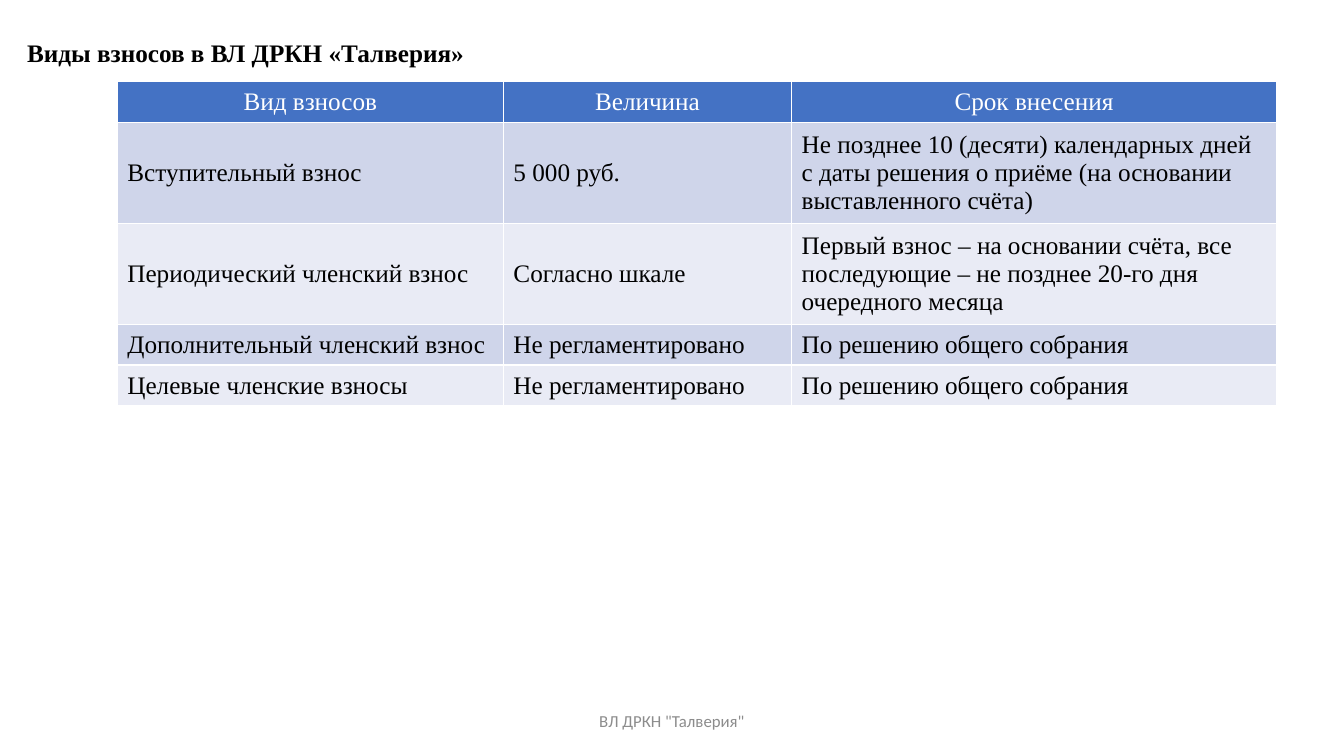
from pptx import Presentation
from pptx.dml.color import RGBColor
from pptx.enum import text
from pptx.util import Pt

BLACK = RGBColor(0x00, 0x00, 0x00)
WHITE = RGBColor(0xFF, 0xFF, 0xFF)
GRAY = RGBColor(0x8C, 0x8C, 0x8C)
HEADER_BLUE = RGBColor(0x44, 0x72, 0xC4)
BANDS = (RGBColor(0xCF, 0xD5, 0xEA), RGBColor(0xE9, 0xEB, 0xF5))
SERIF, SANS = "Times New Roman", "Calibri"
LEFT, CENTER = text.PP_ALIGN.LEFT, text.PP_ALIGN.CENTER
TOP, MIDDLE = text.MSO_ANCHOR.TOP, text.MSO_ANCHOR.MIDDLE

COLUMN_WIDTHS = (275.8, 205.9, 346.3)
LINE_ROW, TALL_ROW = 29.2, 72
FEES = (
    ("Вид взносов", "Величина", "Срок внесения"),
    ("Вступительный взнос", "5 000 руб.",
     "Не позднее 10 (десяти) календарных дней с даты решения о приёме "
     "(на основании выставленного счёта)"),
    ("Периодический членский взнос", "Согласно шкале",
     "Первый взнос – на основании счёта, все последующие – "
     "не позднее 20-го дня очередного месяца"),
    ("Дополнительный членский взнос", "Не регламентировано",
     "По решению общего собрания"),
    ("Целевые членские взносы", "Не регламентировано",
     "По решению общего собрания"),
)
ROW_HEIGHTS = (LINE_ROW, TALL_ROW, TALL_ROW, LINE_ROW, LINE_ROW)


def write(tf, words, size, font, color, align=LEFT, bold=False):
    p = tf.paragraphs[0]
    p.alignment = align
    r = p.add_run()
    r.text = words
    r.font.size = Pt(size)
    r.font.name = font
    r.font.bold = bold
    r.font.color.rgb = color


def add_title(s, words):
    sp = s.shapes.title
    sp.left, sp.top, sp.width, sp.height = Pt(12.2), Pt(23), Pt(934.6), Pt(29)
    tf = sp.text_frame
    tf.word_wrap = True
    tf.auto_size = text.MSO_AUTO_SIZE.SHAPE_TO_FIT_TEXT
    tf.vertical_anchor = TOP
    write(tf, words, 18, SERIF, BLACK, bold=True)


def add_fee_table(s):
    frame = s.shapes.add_table(len(FEES), len(COLUMN_WIDTHS), Pt(83.8), Pt(58.3),
                               Pt(sum(COLUMN_WIDTHS)), Pt(sum(ROW_HEIGHTS)))
    table = frame.table
    for column, width in zip(table.columns, COLUMN_WIDTHS):
        column.width = Pt(width)
    for row, height in zip(table.rows, ROW_HEIGHTS):
        row.height = Pt(height)

    # Header row, then alternating bands
    for i, fee in enumerate(FEES):
        header = i == 0
        for j, words in enumerate(fee):
            cell = table.cell(i, j)
            cell.vertical_anchor = MIDDLE
            cell.fill.solid()
            cell.fill.fore_color.rgb = HEADER_BLUE if header else BANDS[(i - 1) % 2]
            write(cell.text_frame, words, 18, SERIF,
                  WHITE if header else BLACK, CENTER if header else LEFT)


def add_footer(s, words):
    sp = s.shapes.add_textbox(Pt(318), Pt(500.5), Pt(324), Pt(28.8))
    tf = sp.text_frame
    tf.word_wrap = True
    tf.vertical_anchor = MIDDLE
    write(tf, words, 12, SANS, GRAY, CENTER)


def main():
    prs = Presentation()
    prs.slide_width, prs.slide_height = Pt(960), Pt(540)
    s = prs.slides.add_slide(prs.slide_layouts[5])
    add_title(s, "Виды взносов в ВЛ ДРКН «Талверия»")
    add_fee_table(s)
    add_footer(s, 'ВЛ ДРКН "Талверия"')
    prs.save("out.pptx")


if __name__ == "__main__":
    main()
